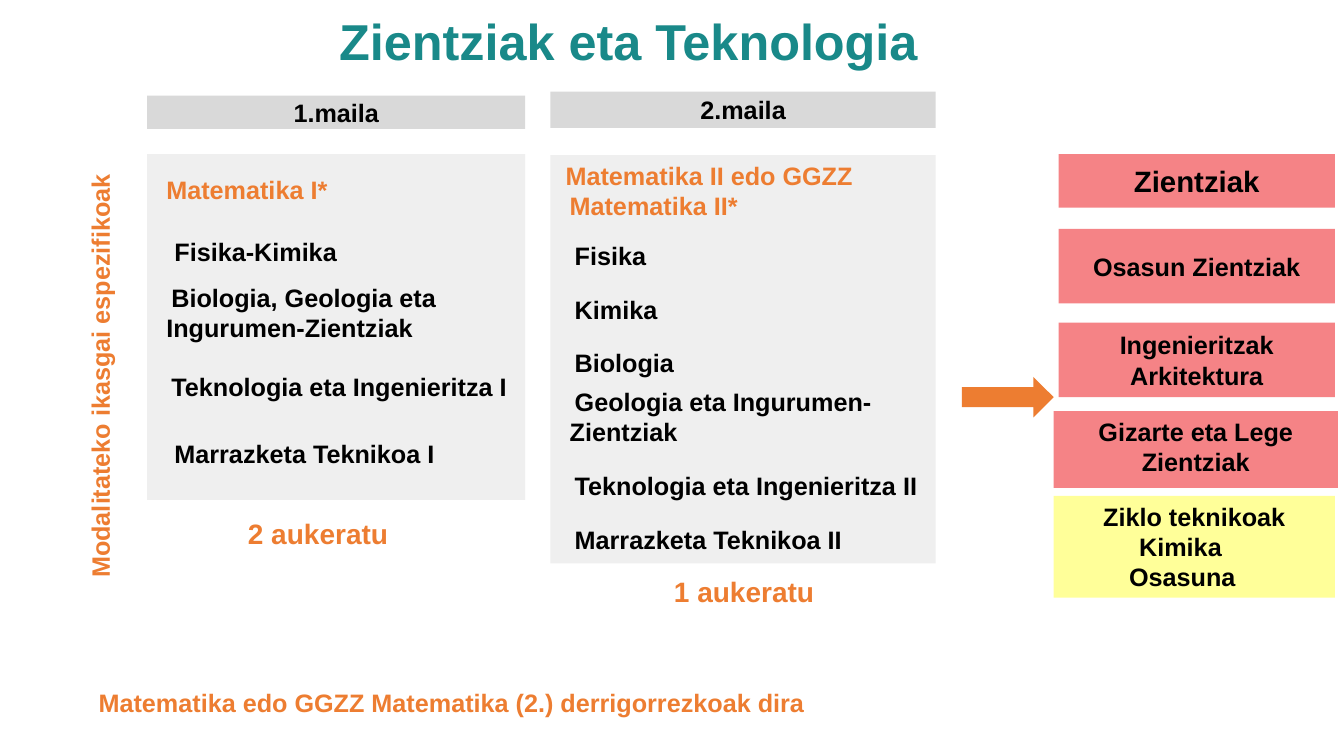
from pptx import Presentation
from pptx.dml.color import RGBColor
from pptx.enum.shapes import MSO_SHAPE
from pptx.enum.text import MSO_ANCHOR, MSO_AUTO_SIZE, PP_ALIGN
from pptx.oxml.ns import qn
from pptx.util import Inches, Pt
from lxml.etree import SubElement

ORANGE = RGBColor(0xED, 0x7D, 0x31)
TEAL = RGBColor(0x19, 0x89, 0x89)
BLACK = RGBColor(0x00, 0x00, 0x00)
HEADER_GRAY = RGBColor(0xD9, 0xD9, 0xD9)
LIST_GRAY = RGBColor(0xEF, 0xEF, 0xEF)
PINK = RGBColor(0xF5, 0x83, 0x86)
YELLOW = RGBColor(0xFF, 0xFF, 0x99)


class SlideBuilder:
    font_name = "Arial"

    def __init__(self, page):
        self.page = page

    def place(self, box, at):
        box.left, box.top, box.width, box.height = map(Inches, at)

    def frame(self, box, anchor=MSO_ANCHOR.TOP):
        frame = box.text_frame
        frame.word_wrap = True
        frame.auto_size = MSO_AUTO_SIZE.NONE
        frame.vertical_anchor = anchor
        frame.margin_left = frame.margin_right = Inches(0.1)
        frame.margin_top = frame.margin_bottom = Inches(0.05)
        return frame

    def style(self, para, size=18, color=BLACK, align=PP_ALIGN.CENTER):
        para.alignment = align
        para.font.name = self.font_name
        para.font.size = Pt(size)
        para.font.bold = True
        para.font.color.rgb = color

    def indent(self, para, first, rest):
        """Set where the first line and the following lines start."""
        properties = para._p.get_or_add_pPr()
        properties.set("marL", str(Inches(rest)))
        properties.set("indent", str(Inches(first) - Inches(rest)))

    def title(self, at, text):
        box = self.page.shapes.title
        self.place(box, at)
        para = self.frame(box).paragraphs[0]
        para.text = text
        self.style(para, 36, TEAL)

    def label(self, at, text, size=18, align=PP_ALIGN.CENTER, rotation=0):
        box = self.page.shapes.add_textbox(*map(Inches, at))
        box.rotation = rotation
        para = self.frame(box).paragraphs[0]
        para.text = text
        self.style(para, size, ORANGE, align)
        return para

    def shape(self, at, fill, kind=MSO_SHAPE.RECTANGLE):
        box = self.page.shapes.add_shape(kind, *map(Inches, at))
        box.shadow.inherit = False
        box.fill.solid()
        box.fill.fore_color.rgb = fill
        box.line.fill.background()
        return box

    def panel(self, at, fill, lines, size=18, anchor=MSO_ANCHOR.MIDDLE):
        frame = self.frame(self.shape(at, fill), anchor)
        for number, line in enumerate(lines):
            para = frame.add_paragraph() if number else frame.paragraphs[0]
            para.text = line
            self.style(para, size)
        return frame.paragraphs

    def subjects(self, index, at, items):
        """Fill a body placeholder; the first subject is the compulsory one."""
        box = self.page.placeholders[index]
        self.place(box, at)
        box.fill.solid()
        box.fill.fore_color.rgb = LIST_GRAY
        frame = self.frame(box)
        for number, (text, first, rest, spacing, before) in enumerate(items):
            para = frame.add_paragraph() if number else frame.paragraphs[0]
            para.text = text
            self.style(para, 18, BLACK if number else ORANGE, PP_ALIGN.LEFT)
            para.line_spacing = spacing
            para.space_before = Pt(before)
            self.indent(para, first, rest)
            SubElement(para._p.get_or_add_pPr(), qn("a:buNone"))


def main():
    deck = Presentation()
    deck.slide_width, deck.slide_height = Inches(13.33), Inches(7.5)
    page = deck.slides.add_slide(deck.slide_layouts[3])
    builder = SlideBuilder(page)

    # Title and year headers
    builder.title((1.9, 0.05, 8.67, 0.57), "Zientziak eta Teknologia")
    builder.panel((1.46, 0.95, 3.75, 0.33), HEADER_GRAY, ["1.maila"])
    builder.panel((5.46, 0.91, 3.82, 0.36), HEADER_GRAY, ["2.maila"])

    # Subjects: text, first line start, next lines start, line spacing, space before
    builder.subjects(1, (1.46, 1.53, 3.75, 3.43), [
        ("Matematika I*", 0.09, 0, 1.5, 0),
        ("Fisika-Kimika", 0.17, 0, 1.5, 12),
        ("Biologia, Geologia eta Ingurumen-Zientziak", 0.14, 0.09, 1.0, 11),
        ("Teknologia eta Ingenieritza I", 0.14, 0, 1.5, 10),
        ("Marrazketa Teknikoa I", 0.17, 0, 1.5, 15),
    ])
    builder.subjects(2, (5.46, 1.54, 3.82, 4.05), [
        ("Matematika II edo GGZZ Matematika II*", 0.05, 0.09, 1.0, 0),
        ("Fisika", 0.14, 0, 1.5, 3),
        ("Kimika", 0.14, 0, 1.5, 6),
        ("Biologia", 0.14, 0, 1.5, 6),
        ("Geologia eta Ingurumen-Zientziak", 0.14, 0.09, 1.0, 6),
        ("Teknologia eta Ingenieritza II", 0.14, 0, 1.5, 6),
        ("Marrazketa Teknikoa II", 0.14, 0, 1.5, 6),
    ])

    # Orange notes
    builder.label((1.46, 5.08, 3.39, 0.43), "2 aukeratu", 20)
    builder.label((5.69, 5.65, 3.38, 0.43), "1 aukeratu", 20)
    builder.label((0.88, 6.77, 8.41, 0.5),
                  "Matematika edo GGZZ Matematika (2.) derrigorrezkoak dira",
                  align=PP_ALIGN.LEFT)
    side = builder.label((-1.2, 3.53, 4.48, 0.5), "Modalitateko ikasgai espezifikoak",
                         align=PP_ALIGN.LEFT, rotation=270)
    builder.indent(side, 0.19, 0.19)

    # Arrow to the further studies
    builder.shape((9.54, 3.74, 0.91, 0.4), ORANGE, MSO_SHAPE.RIGHT_ARROW)
    builder.panel((10.5, 1.53, 2.74, 0.53), PINK, ["Zientziak"], size=21)
    builder.panel((10.5, 2.27, 2.74, 0.74), PINK, ["Osasun Zientziak"])
    builder.panel((10.5, 3.2, 2.74, 0.74), PINK, ["Ingenieritzak Arkitektura"])
    builder.panel((10.45, 4.08, 2.82, 0.76), PINK, ["Gizarte eta Lege Zientziak"],
                  anchor=MSO_ANCHOR.TOP)
    cycles = builder.panel((10.45, 4.92, 2.79, 1.01), YELLOW,
                           ["Ziklo teknikoak", "Kimika", "Osasuna"],
                           anchor=MSO_ANCHOR.TOP)
    for para, start in zip(cycles[1:], (0.75, 0.65)):
        para.alignment = PP_ALIGN.LEFT
        builder.indent(para, start, start)

    deck.save("out.pptx")


if __name__ == "__main__":
    main()
